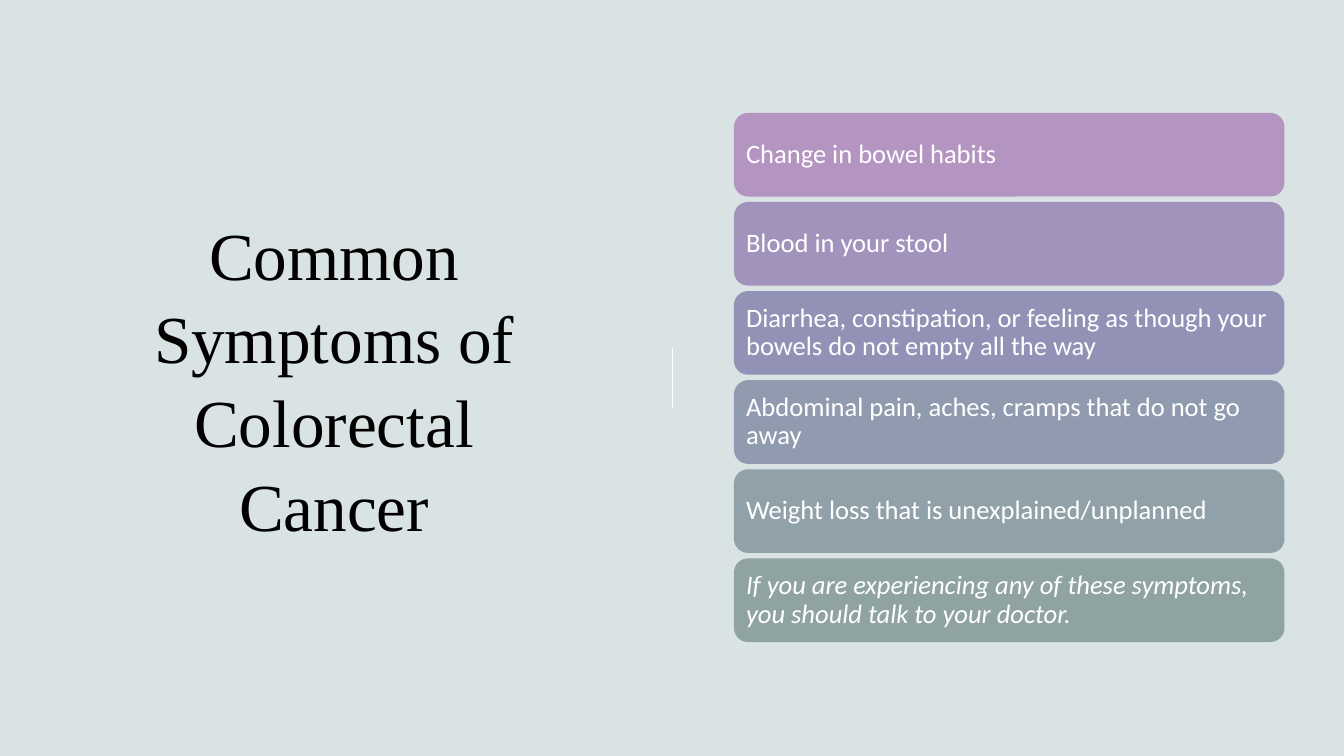
from dataclasses import dataclass

from lxml import etree
from pptx import Presentation
from pptx.dml.color import RGBColor
from pptx.enum.shapes import MSO_CONNECTOR as CONN, MSO_SHAPE as SHAPE
from pptx.enum.text import MSO_ANCHOR as ANCHOR, PP_ALIGN as ALIGN
from pptx.oxml.ns import qn
from pptx.util import Inches, Pt


@dataclass(frozen=True)
class Theme:
    background: str = "DAE3E3"
    title: str = "000000"
    light: str = "FFFFFF"
    title_font: str = "Times New Roman"
    body_font: str = "Calibri"
    title_size: int = 48
    body_size: int = 19


THEME = Theme()

SYMPTOMS = [
    ("Change in bowel habits", "B495C2"),
    ("Blood in your stool", "A293BC"),
    ("Diarrhea, constipation, or feeling as though your bowels do not empty all the way", "9292B6"),
    ("Abdominal pain, aches, cramps that do not go away", "919BB0"),
    ("Weight loss that is unexplained/unplanned", "90A1AA"),
]
ADVICE = ("If you are experiencing any of these symptoms, you should talk to your doctor.", "8FA3A3")

CARD_LEFT, CARD_WIDTH, CARD_HEIGHT = 7.28, 5.46, 0.83
FIRST_TOP, LAST_TOP = 1.12, 5.54


def rgb(color):
    return RGBColor.from_string(color)


def write_text(sp, text, *, font, size, color, align=ALIGN.LEFT, spacing=1.0, italic=False, inset=0.1):
    tf = sp.text_frame
    tf.word_wrap = True
    tf.vertical_anchor = ANCHOR.MIDDLE
    tf.margin_left = tf.margin_right = tf.margin_top = tf.margin_bottom = Inches(inset)
    p = tf.paragraphs[0]
    p.alignment = align
    p.line_spacing = spacing
    r = p.add_run()
    r.text = text
    r.font.name = font
    r.font.size = Pt(size)
    r.font.italic = italic
    r.font.color.rgb = rgb(color)


def add_title(s, text):
    sp = s.shapes.add_textbox(Inches(1.18), Inches(1.18), Inches(4.27), Inches(5.13))
    write_text(sp, text, font=THEME.title_font, size=THEME.title_size,
               color=THEME.title, align=ALIGN.CENTER, spacing=1.04)


def add_divider(s):
    line = s.shapes.add_connector(CONN.STRAIGHT, Inches(6.67), Inches(3.45), Inches(6.67), Inches(4.05))
    line.line.color.rgb = rgb(THEME.light)
    line.line.width = Pt(1)
    etree.SubElement(line.element.spPr, qn("a:effectLst"))


def add_card(s, top, text, fill, italic=False):
    sp = s.shapes.add_shape(SHAPE.ROUNDED_RECTANGLE, Inches(CARD_LEFT), Inches(top),
                            Inches(CARD_WIDTH), Inches(CARD_HEIGHT))
    sp.shadow.inherit = False
    sp.fill.solid()
    sp.fill.fore_color.rgb = rgb(fill)
    sp.line.fill.background()
    write_text(sp, text, font=THEME.body_font, size=THEME.body_size,
               color=THEME.light, spacing=0.9, italic=italic, inset=0.08)


def main():
    prs = Presentation()
    prs.slide_width, prs.slide_height = Inches(13.33), Inches(7.5)
    s = prs.slides.add_slide(prs.slide_layouts[6])
    s.background.fill.solid()
    s.background.fill.fore_color.rgb = rgb(THEME.background)

    add_title(s, "Common Symptoms of Colorectal Cancer")
    add_divider(s)
    step = (LAST_TOP - FIRST_TOP) / len(SYMPTOMS)
    for i, (text, fill) in enumerate(SYMPTOMS):
        add_card(s, FIRST_TOP + i * step, text, fill)
    add_card(s, LAST_TOP, *ADVICE, italic=True)

    prs.save("out.pptx")


if __name__ == "__main__":
    main()
